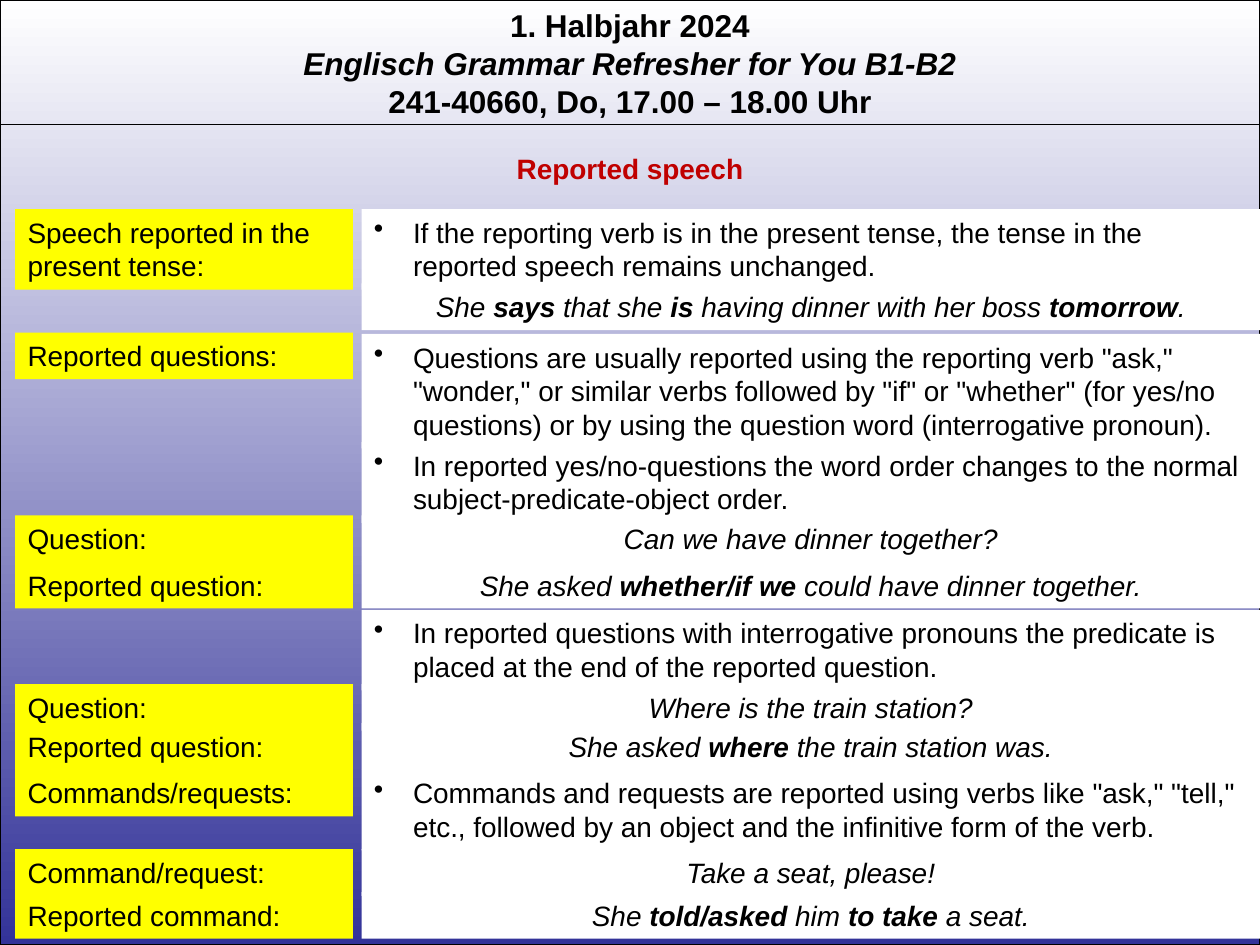
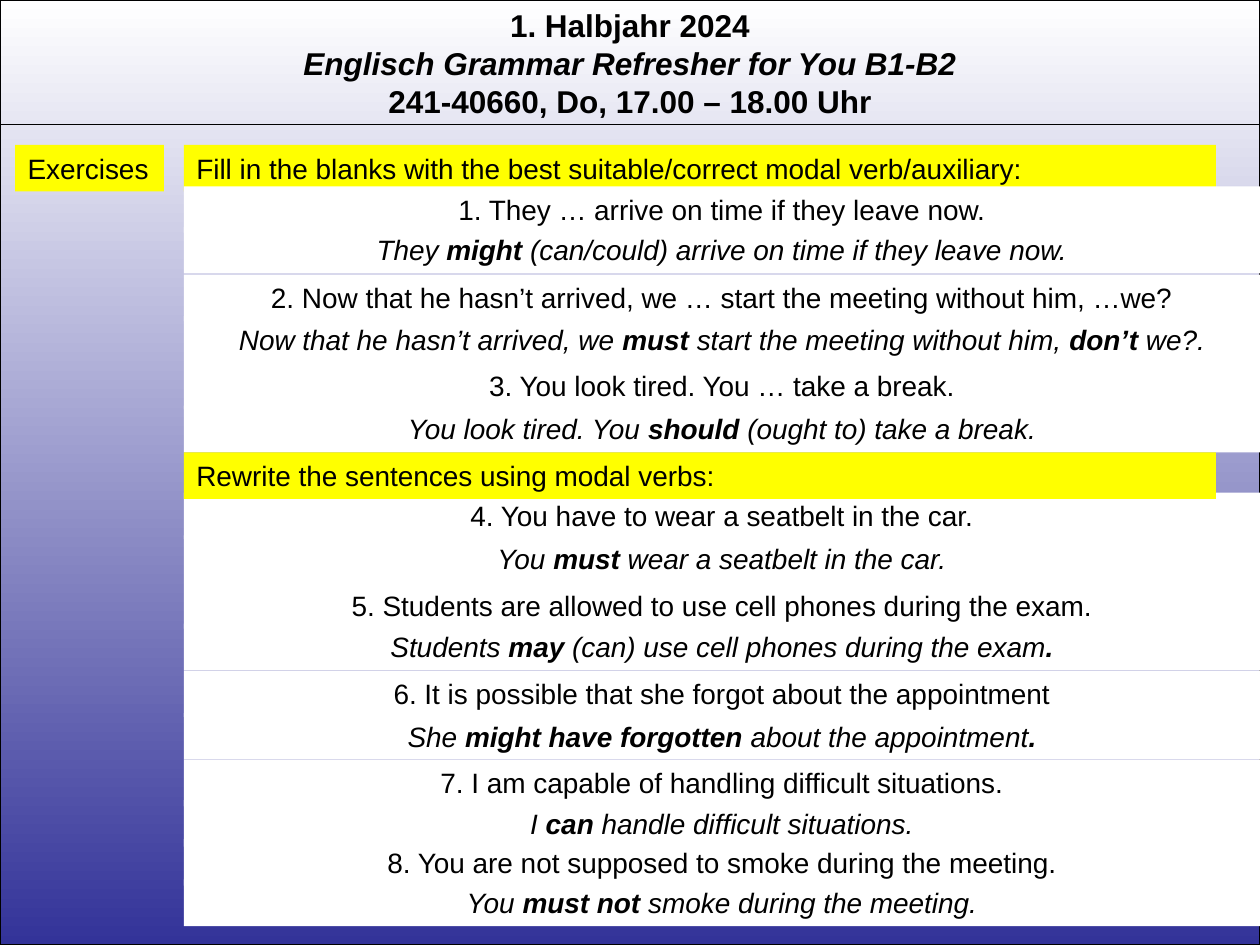
from lxml import etree
from pptx import Presentation
from pptx.dml.color import RGBColor
from pptx.enum.shapes import MSO_CONNECTOR, MSO_SHAPE
from pptx.enum.text import MSO_ANCHOR, MSO_AUTO_SIZE, PP_ALIGN
from pptx.oxml.ns import qn
from pptx.util import Pt

LEFT, MID = PP_ALIGN.LEFT, PP_ALIGN.CENTER
TOP = MSO_ANCHOR.TOP
GROW = MSO_AUTO_SIZE.SHAPE_TO_FIT_TEXT
RECT = MSO_SHAPE.RECTANGLE
LINE = MSO_CONNECTOR.STRAIGHT

PX = 9144  # 100 px to the inch
WIDE, HIGH = 1000, 750
HEX = {"ink": "000000", "red": "C00000", "mark": "FFFF00",
       "paper": "FFFFFF", "deep": "333399"}

HEAD = [("1. Halbjahr 2024", False),
        ("Englisch Grammar Refresher for You B1-B2", True),
        ("241-40660, Do, 17.00 – 18.00 Uhr", False)]

# Kind of row, top, number of lines, text
LABELS = [
    (166, 2, "Speech reported in the present tense:"),
    (264, 1, "Reported questions:"),
    (409, 1, "Question:"),
    (446, 1, "Reported question:"),
    (543, 1, "Question:"),
    (574, 1, "Reported question:"),
    (611, 1, "Commands/requests:"),
    (674, 1, "Command/request:"),
    (708, 1, "Reported command:"),
]
RULES = [
    (166, 2, "If the reporting verb is in the present tense, the tense in the "
             "reported speech remains unchanged."),
    (265, 3, 'Questions are usually reported using the reporting verb "ask," '
             '"wonder," or similar verbs followed by "if" or "whether" (for '
             'yes/no questions) or by using the question word '
             '(interrogative pronoun).'),
    (351, 2, "In reported yes/no-questions the word order changes to the "
             "normal subject-predicate-object order."),
    (484, 2, "In reported questions with interrogative pronouns the predicate "
             "is placed at the end of the reported question."),
    (611, 2, 'Commands and requests are reported using verbs like "ask," '
             '"tell," etc., followed by an object and the infinitive form of '
             'the verb.'),
]
SAMPLES = [
    (225, "She *says* that she *is* having dinner with her boss *tomorrow*."),
    (409, "Can we have dinner together?"),
    (446, "She asked *whether/if we* could have dinner together."),
    (543, "Where is the train station?"),
    (574, "She asked *where* the train station was."),
    (674, "Take a seat, please!"),
    (708, "She *told/asked* him *to take* a seat."),
]

# Top of task, top of answer, task, answer
TASKS = [
    (148, 180, "They … arrive on time if they leave now.",
     "They *might* (can/could) arrive on time if they leave now."),
    (218, 251, "Now that he hasn’t arrived, we … start the meeting without "
               "him, …we?",
     "Now that he hasn’t arrived, we *must* start the meeting without him, "
     "*don’t* we?."),
    (288, 322, "You look tired. You … take a break.",
     "You look tired. You *should* (ought to) take a break."),
    (391, 425, "You have to wear a seatbelt in the car.",
     "You *must* wear a seatbelt in the car."),
    (462, 495, "Students are allowed to use cell phones during the exam.",
     "Students *may* (can) use cell phones during the exam*.*"),
    (532, 566, "It is possible that she forgot about the appointment",
     "She *might have forgotten* about the appointment*.*"),
    (603, 635, "I am capable of handling difficult situations.",
     "I *can* handle difficult situations."),
    (666, 698, "You are not supposed to smoke during the meeting.",
     "You *must not* smoke during the meeting."),
]


def tint(name):
    return RGBColor.from_string(HEX[name])


def write(para, text, size=16, color="ink", bold=False, slant=False,
          align=LEFT, dot=False):
    """Fill a paragraph; words between asterisks are bold."""
    para.alignment = align
    if dot:
        props = para._p.get_or_add_pPr()
        props.set("marL", str(31 * PX))
        props.set("indent", str(-31 * PX))
        etree.SubElement(props, qn("a:buChar")).set("char", "•")
    for pos, part in enumerate(text.split("*")):
        if not part:
            continue
        run = para.add_run()
        run.text = part
        font = run.font
        font.name, font.size = "Arial", Pt(size)
        font.bold, font.italic = bold or pos % 2 == 1, slant
        font.color.rgb = tint(color)


class Deck:
    def __init__(self):
        self.file = Presentation()
        self.file.slide_width = WIDE * PX
        self.file.slide_height = HIGH * PX
        self.slide = None

    def page(self):
        """Start a slide with the backdrop, course head and rule."""
        self.slide = self.file.slides.add_slide(self.file.slide_layouts[6])
        back = self.rect(0, 0, WIDE, HIGH)
        back.fill.gradient()
        back.fill.gradient_angle = 270
        for stop, name, at in zip(back.fill.gradient_stops,
                                  ("paper", "deep"), (0, 1)):
            stop.color.rgb, stop.position = tint(name), at
        self.stroke(back.line)
        frame = self.frame(self.area(0, 0, WIDE, 101))
        for pos, (text, slant) in enumerate(HEAD):
            para = frame.add_paragraph() if pos else frame.paragraphs[0]
            write(para, text, size=18, bold=True, slant=slant, align=MID)
        self.rule(99)

    def stroke(self, line):
        line.color.rgb, line.width = tint("ink"), Pt(0.75)

    def rect(self, *at):
        shape = self.slide.shapes.add_shape(RECT, *(n * PX for n in at))
        shape.shadow.inherit = False
        return shape

    def area(self, *at):
        return self.slide.shapes.add_textbox(*(n * PX for n in at))

    def rule(self, y):
        line = self.slide.shapes.add_connector(LINE, 0, y * PX,
                                               WIDE * PX, y * PX)
        self.stroke(line.line)
        etree.SubElement(line._element.spPr, qn("a:effectLst"))

    def frame(self, shape):
        frame = shape.text_frame
        frame.word_wrap, frame.auto_size = True, GROW
        frame.vertical_anchor = TOP
        return frame

    def box(self, x, y, width, text, rows=1, fill=None, **style):
        """Place a text box as high as its rows, filled on request."""
        at = x, y, width, 10 + 27 * rows
        if fill:
            shape = self.rect(*at)
            shape.fill.solid()
            shape.fill.fore_color.rgb = tint(fill)
            shape.line.fill.background()
        else:
            shape = self.area(*at)
        write(self.frame(shape).paragraphs[0], text, **style)

    def save(self):
        self.file.save("out.pptx")


def speech(deck):
    deck.page()
    deck.box(0, 115, WIDE, "Reported speech", color="red", bold=True,
             align=MID)
    for top, rows, text in LABELS:
        deck.box(12, top, 268, text, rows, "mark")
    x = 287
    for top, rows, text in RULES:
        deck.box(x, top, WIDE - x, text, rows, "paper", dot=True)
    for top, text in SAMPLES:
        deck.box(x, top, WIDE - x, text, fill="paper", slant=True, align=MID)


def drill(deck):
    deck.page()
    x = 146
    deck.box(12, 115, 118, "Exercises", fill="mark")
    deck.box(x, 115, 819, "Fill in the blanks with the best suitable/correct "
             "modal verb/auxiliary:", fill="mark")
    for num, (top, low, task, answer) in enumerate(TASKS, 1):
        deck.box(x, top, WIDE - x, f"{num}. {task}", fill="paper", align=MID)
        deck.box(x, low, WIDE - x, answer, fill="paper", slant=True,
                 align=MID)
    deck.box(x, 359, 819, "Rewrite the sentences using modal verbs:",
             fill="mark")


def main():
    deck = Deck()
    speech(deck)
    drill(deck)
    deck.save()


if __name__ == "__main__":
    main()
